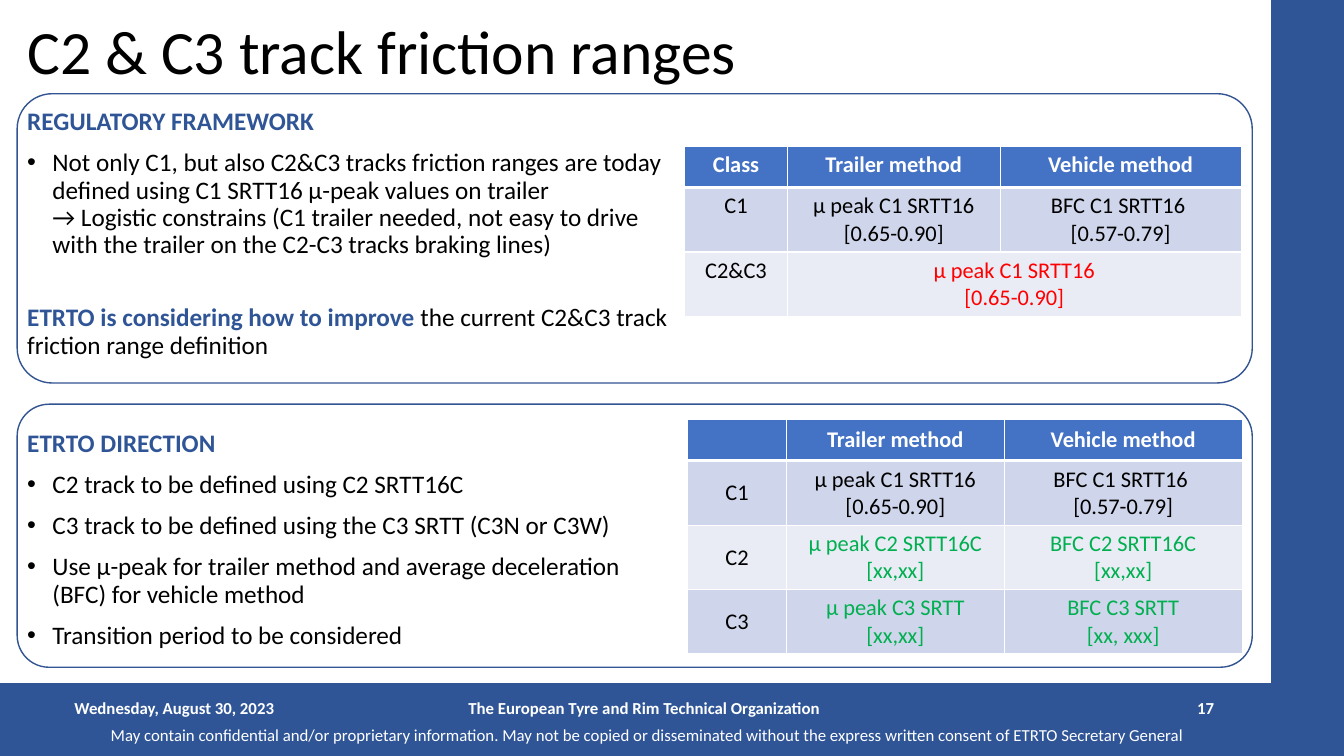
from lxml import etree
from pptx import Presentation
from pptx.dml.color import RGBColor
from pptx.enum.shapes import MSO_SHAPE
from pptx.enum.text import MSO_ANCHOR, MSO_AUTO_SIZE, PP_ALIGN
from pptx.oxml.ns import qn
from pptx.util import Pt

RECT, ROUND = MSO_SHAPE.RECTANGLE, MSO_SHAPE.ROUNDED_RECTANGLE
TOP, MIDDLE = MSO_ANCHOR.TOP, MSO_ANCHOR.MIDDLE
LEFT, CENTER, RIGHT = PP_ALIGN.LEFT, PP_ALIGN.CENTER, PP_ALIGN.RIGHT
FIXED = MSO_AUTO_SIZE.NONE
PX = 9144
NAVY, WHITE, BLACK = "2F5597", "FFFFFF", "000000"
RED, GREEN = "FF0000", "00B050"
HEAD, BANDS = "4472C4", ("CFD5EA", "E9EBF5")


def tint(code):
    return RGBColor.from_string(code)


def write(par, text, size, color, bold=False, align=LEFT):
    par.alignment = align
    for i, line in enumerate(text.split("\n")):
        if i:
            par.add_line_break()
        run = par.add_run()
        run.text = line
        look = {"name": "Calibri", "size": Pt(size), "bold": bold}
        for key, value in look.items():
            setattr(run.font, key, value)
        run.font.color.rgb = tint(color)


deck = Presentation()
deck.slide_width, deck.slide_height = 1333 * PX, 750 * PX
slide = deck.slides.add_slide(deck.slide_layouts[3])
shapes = slide.shapes
title, frame, plan = slide.placeholders

panels = [
    (RECT, (0, 678, 1332, 72), NAVY, NAVY),
    (RECT, (1261, 0, 72, 750), NAVY, NAVY),
    (ROUND, (17, 93, 1225, 287), None, "325491"),
    (ROUND, (17, 401, 1225, 261), None, "325491"),
]
for kind, box, fill, line in panels:
    panel = shapes.add_shape(kind, *[n * PX for n in box])
    panel.shadow.inherit = False
    if fill:
        panel.fill.solid()
        panel.fill.fore_color.rgb = tint(fill)
    else:
        panel.fill.background()
        panel.adjustments[0] = 0.121
    panel.line.color.rgb = tint(line)
    panel.line.width = Pt(1)

holders = [
    (title, (17, 10, 1165, 89), MIDDLE),
    (frame, (17, 103, 662, 277), TOP),
    (plan, (17, 422, 662, 199), TOP),
]
for holder, box, anchor in holders:
    for key, n in zip(("left", "top", "width", "height"), box):
        setattr(holder, key, n * PX)
    body = holder.text_frame
    look = {"auto_size": FIXED, "word_wrap": True, "vertical_anchor": anchor}
    for key, value in look.items():
        setattr(body, key, value)

head = title.text_frame.paragraphs[0]
head.line_spacing = 0.9
write(head, "C2 & C3 track friction ranges", 44, BLACK)

lists = [
    (frame, [
        (False, 0, [("REGULATORY FRAMEWORK", NAVY)]),
        (True, 10, [(
            "Not only C1, but also C2&C3 tracks friction ranges are today "
            "defined using C1 SRTT16 µ-peak values on trailer\n"
            "→ Logistic constrains (C1 trailer needed, not easy to drive "
            "with the trailer on the C2-C3 tracks braking lines)", BLACK)]),
        (False, 33, [
            ("ETRTO is considering how to improve ", NAVY),
            ("the current C2&C3 track friction range definition", BLACK)]),
    ]),
    (plan, [
        (False, 0, [("ETRTO DIRECTION", NAVY)]),
        (True, 10, [("C2 track to be defined using C2 SRTT16C", BLACK)]),
        (True, 10, [(
            "C3 track to be defined using the C3 SRTT (C3N or C3W)", BLACK)]),
        (True, 10, [(
            "Use µ-peak for trailer method and average deceleration "
            "(BFC) for vehicle method", BLACK)]),
        (True, 10, [("Transition period to be considered", BLACK)]),
    ]),
]
for holder, items in lists:
    body = holder.text_frame
    for i, (dot, space, parts) in enumerate(items):
        par = body.add_paragraph() if i else body.paragraphs[0]
        props = par._p.get_or_add_pPr()
        props.set("marL", str(25 * PX if dot else 0))
        props.set("indent", str(-25 * PX if dot else 0))
        if dot:
            etree.SubElement(props, qn("a:buFont"), typeface="Arial")
            etree.SubElement(props, qn("a:buChar"), char="•")
        else:
            etree.SubElement(props, qn("a:buNone"))
        par.line_spacing = 0.9
        par.space_before = Pt(space)
        for text, color in parts:
            write(par, text, 18, color, color == NAVY)

notes = [
    ((100, 721, 1133, 17), LEFT, False,
     "May contain confidential and/or proprietary information. "
     "May not be copied or disseminated without the express written "
     "consent of ETRTO Secretary General"),
    ((64, 682, 300, 40), LEFT, True, "Wednesday, August 30, 2023"),
    ((414, 682, 450, 40), CENTER, True,
     "The European Tyre and Rim Technical Organization"),
    ((914, 682, 300, 40), RIGHT, True, "17"),
]
for box, align, bold, text in notes:
    body = shapes.add_textbox(*[n * PX for n in box]).text_frame
    body.word_wrap = True
    body.vertical_anchor = MIDDLE
    write(body.paragraphs[0], text, 12, WHITE, bold, align)

methods = ["Trailer method", "Vehicle method"]
base = ["C1", "µ peak C1 SRTT16 [0.65-0.90]", "BFC C1 SRTT16 \n[0.57-0.79]"]
grids = [
    ((679, 145), (102, 211, 239), TOP, RED, [
        ["Class", *methods],
        base,
        ["C2&C3", "µ peak C1 SRTT16\n[0.65-0.90]", ""],
    ]),
    ((682, 416), (98, 216, 236), MIDDLE, GREEN, [
        ["", *methods],
        base,
        ["C2", "µ peak C2 SRTT16C [xx,xx]", "BFC C2 SRTT16C\n[xx,xx]"],
        ["C3", "µ peak C3 SRTT [xx,xx]", "BFC C3 SRTT\n[xx, xxx]"],
    ]),
]
for (x, y), cols, anchor, accent, rows in grids:
    highs = [41] + [64] * (len(rows) - 1)
    box = x, y, sum(cols), sum(highs)
    grid = shapes.add_table(len(rows), 3, *[n * PX for n in box]).table
    for col, wide in zip(grid.columns, cols):
        col.width = wide * PX
    for r, (row, high) in enumerate(zip(rows, highs)):
        grid.rows[r].height = high * PX
        for c, text in enumerate(row):
            cell = grid.cell(r, c)
            cell.vertical_anchor = anchor
            props = cell._tc.get_or_add_tcPr()
            for side in "LRTB":
                thick = (r == 0 and side == "B") or (r == 1 and side == "T")
                edge = etree.SubElement(
                    props, qn("a:ln" + side), w=str(Pt(3 if thick else 1)))
                paint = etree.SubElement(edge, qn("a:solidFill"))
                etree.SubElement(paint, qn("a:srgbClr"), val=WHITE)
            cell.fill.solid()
            cell.fill.fore_color.rgb = tint(BANDS[(r - 1) % 2] if r else HEAD)
            color = WHITE if r == 0 else accent if r > 1 and c else BLACK
            if not text:
                continue
            for i, line in enumerate(text.split("\n")):
                body = cell.text_frame
                par = body.add_paragraph() if i else body.paragraphs[0]
                write(par, line, 16, color, r == 0, CENTER)
    if accent == RED:
        grid.cell(2, 1).merge(grid.cell(2, 2))

deck.save("out.pptx")
